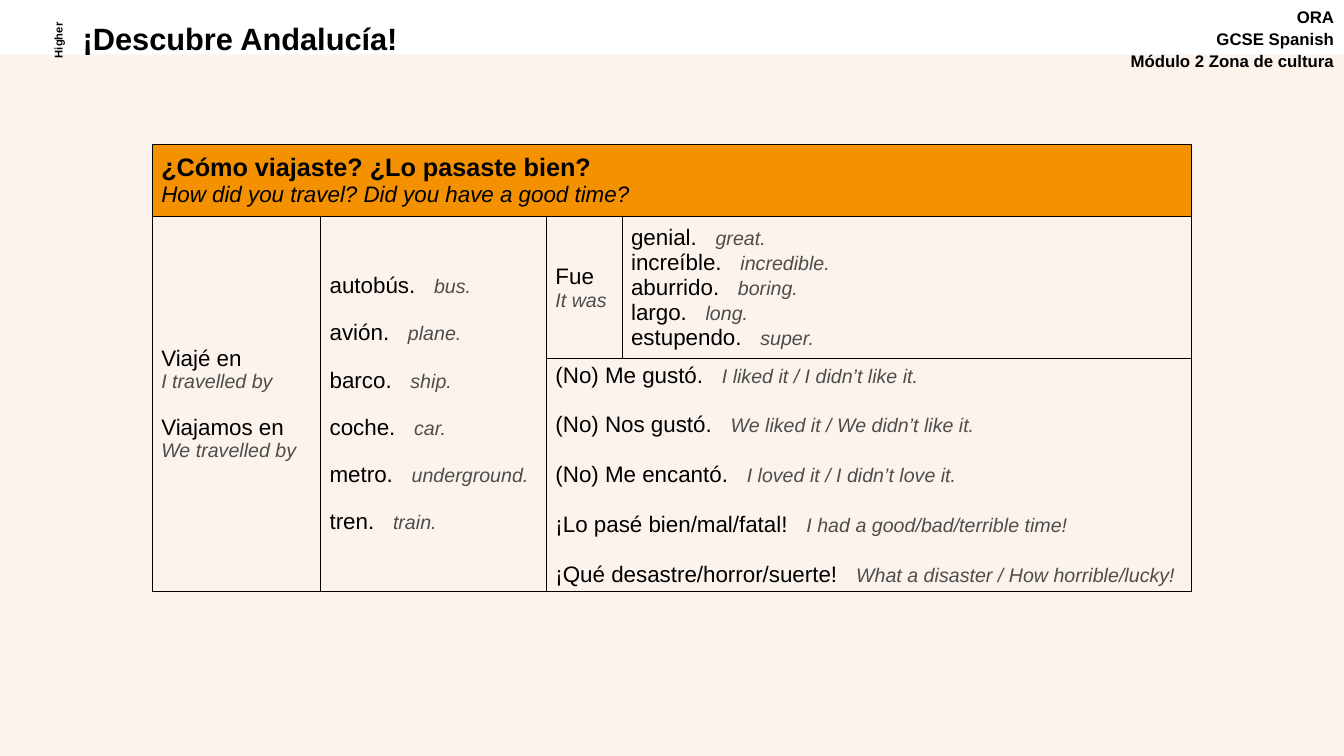
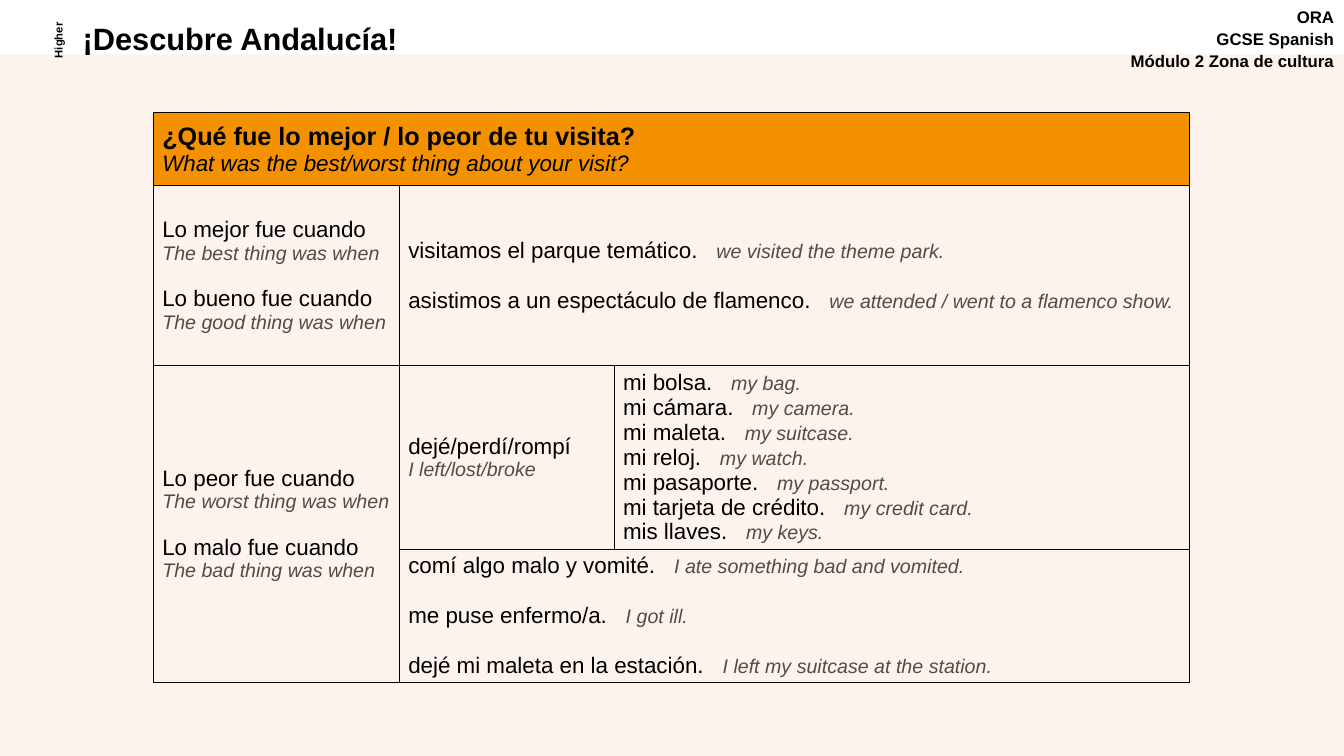
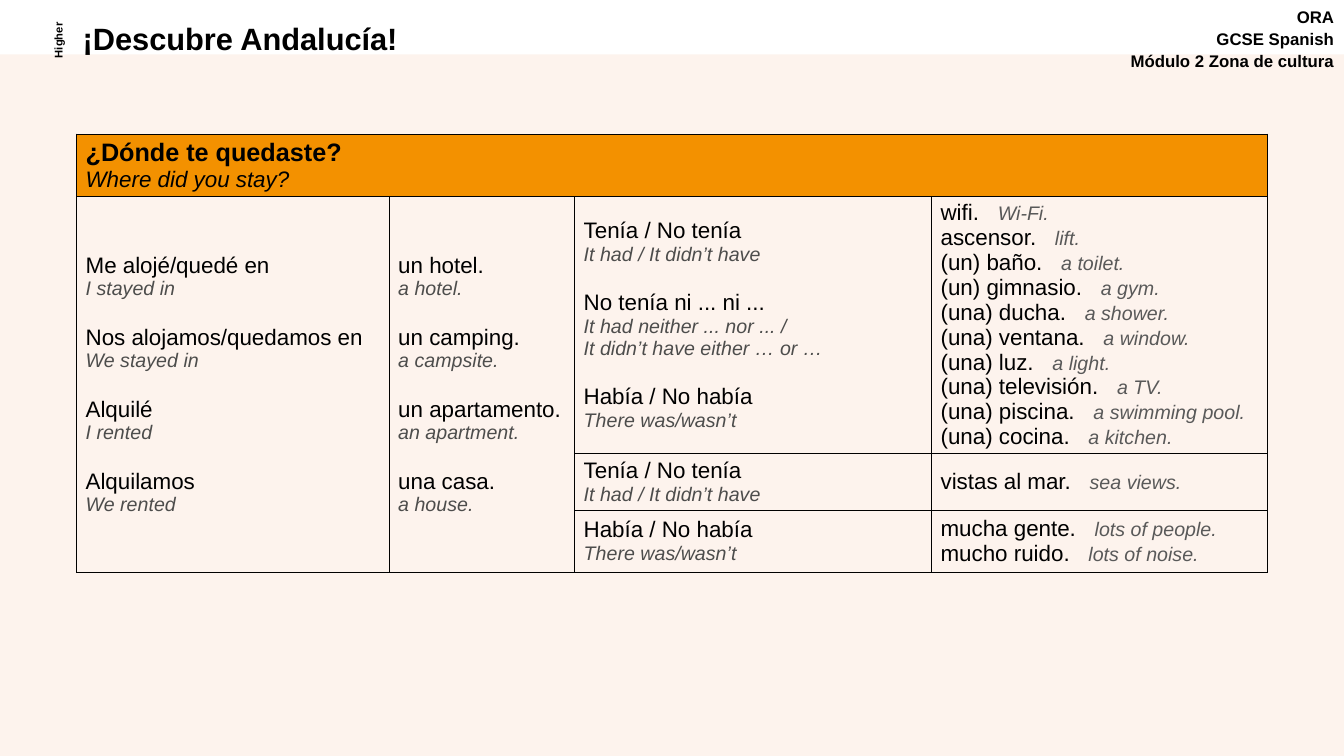
"""Build three Spanish vocabulary slides about a visit to Andalusia."""
from lxml import etree
from pptx import Presentation
from pptx.dml.color import RGBColor
from pptx.enum.shapes import MSO_SHAPE
from pptx.enum.text import MSO_ANCHOR, MSO_AUTO_SIZE, PP_ALIGN
from pptx.oxml.ns import qn
from pptx.util import Inches, Pt

RECT = MSO_SHAPE.RECTANGLE
TOP, MIDDLE = MSO_ANCHOR.TOP, MSO_ANCHOR.MIDDLE
LEFT, CENTER, RIGHT = PP_ALIGN.LEFT, PP_ALIGN.CENTER, PP_ALIGN.RIGHT
NO_FIT = MSO_AUTO_SIZE.NONE

BLACK = RGBColor(0x00, 0x00, 0x00)
CREAM = RGBColor(0xFD, 0xF3, 0xED)
ORANGE = RGBColor(0xF3, 0x91, 0x00)
DARK = RGBColor(0x4D, 0x4D, 0x4C)
GREY = RGBColor(0x59, 0x59, 0x59)
FONT = "Arial"
SMALL_GAP, MID_GAP, WIDE_GAP = 15.6, 16, 17.9


def write(p, text, size=16, color=BLACK, bold=False, italic=False, spacing=0):
    """Add a formatted run to a paragraph."""
    r = p.add_run()
    r.text = text
    r.font.name, r.font.size = FONT, Pt(size)
    r.font.bold, r.font.italic = bold, italic
    r.font.color.rgb = color
    if spacing:
        r.font._element.set("spc", str(spacing))


def add_borders(cell):
    """Draw a thin black line on each side of a table cell."""
    tcPr = cell._tc.get_or_add_tcPr()
    for side in ("a:lnL", "a:lnR", "a:lnT", "a:lnB"):
        ln = etree.SubElement(tcPr, qn(side), w=str(Pt(0.75)))
        fill = etree.SubElement(ln, qn("a:solidFill"))
        etree.SubElement(fill, qn("a:srgbClr"), val=str(BLACK))


# Cells: row, column, row span, column span, gap, translation colour, groups of "Spanish|English" lines
SLIDES = [
    {
        "at": (1.51, 1.43),
        "cols": [1.67, 2.24, 0.75, 5.65],
        "rows": [0.72, 1.41, 2.3],
        "head": ("¿Cómo viajaste? ¿Lo pasaste bien?",
                 "How did you travel? Did you have a good time?"),
        "cells": [
            (1, 0, 2, 1, SMALL_GAP, DARK, [
                "Viajé en\n|I travelled by",
                "Viajamos en\n|We travelled by"]),
            (1, 1, 2, 1, MID_GAP, DARK, [
                "autobús.|bus.", "avión.|plane.", "barco.|ship.",
                "coche.|car.", "metro.|underground.", "tren.|train."]),
            (1, 2, 1, 1, 0, DARK, ["Fue\n|It was"]),
            (1, 3, 1, 1, 0, DARK, [
                "genial.|great.", "increíble.|incredible.",
                "aburrido.|boring.", "largo.|long.", "estupendo.|super."]),
            (2, 2, 1, 2, WIDE_GAP, DARK, [
                "(No) Me gustó.|I liked it / I didn’t like it.",
                "(No) Nos gustó.|We liked it / We didn’t like it.",
                "(No) Me encantó.|I loved it / I didn’t love it.",
                "¡Lo pasé bien/mal/fatal!|I had a good/bad/terrible time!",
                "¡Qué desastre/horror/suerte!|What a disaster / How horrible/lucky!"]),
        ],
    },
    {
        "at": (1.52, 1.12),
        "cols": [2.44, 2.13, 5.71],
        "rows": [0.72, 1.79, 1.82, 1.32],
        "head": ("¿Qué fue lo mejor / lo peor de tu visita?",
                 "What was the best/worst thing about your visit?"),
        "cells": [
            (1, 0, 1, 1, SMALL_GAP, DARK, [
                "Lo mejor fue cuando\n|The best thing was when",
                "Lo bueno fue cuando\n|The good thing was when"]),
            (1, 1, 1, 2, WIDE_GAP, DARK, [
                "visitamos el parque temático.|we visited the theme park.",
                "asistimos a un espectáculo de flamenco.|we attended / went to a flamenco show."]),
            (2, 0, 2, 1, SMALL_GAP, DARK, [
                "Lo peor fue cuando\n|The worst thing was when",
                "Lo malo fue cuando\n|The bad thing was when"]),
            (2, 1, 1, 1, 0, DARK, ["dejé/perdí/rompí\n|I left/lost/broke"]),
            (2, 2, 1, 1, 0, DARK, [
                "mi bolsa.|my bag.", "mi cámara.|my camera.",
                "mi maleta.|my suitcase.", "mi reloj.|my watch.",
                "mi pasaporte.|my passport.",
                "mi tarjeta de crédito.|my credit card.",
                "mis llaves.|my keys."]),
            (3, 1, 1, 2, WIDE_GAP, DARK, [
                "comí algo malo y vomité.|I ate something bad and vomited.",
                "me puse enfermo/a.|I got ill.",
                "dejé mi maleta en la estación.|I left my suitcase at the station."]),
        ],
    },
    {
        "at": (0.76, 1.33),
        "cols": [3.1, 1.84, 3.54, 3.33],
        "rows": [0.62, 2.55, 0.56, 0.62],
        "head": ("¿Dónde te quedaste?", "Where did you stay?"),
        "cells": [
            (1, 0, 3, 1, WIDE_GAP, DARK, [
                "Me alojé/quedé en\n|I stayed in",
                "Nos alojamos/quedamos en\n|We stayed in",
                "Alquilé\n|I rented",
                "Alquilamos\n|We rented"]),
            (1, 1, 3, 1, WIDE_GAP, DARK, [
                "un hotel.\n|a hotel.", "un camping.\n|a campsite.",
                "un apartamento.\n|an apartment.", "una casa.\n|a house."]),
            (1, 2, 1, 1, WIDE_GAP, DARK, [
                "Tenía / No tenía\n|It had / It didn’t have",
                "No tenía ni ... ni ...\n|It had neither ... nor ... /\n|It didn’t have either … or …",
                "Había / No había\n|There was/wasn’t"]),
            (1, 3, 1, 1, 0, GREY, [
                "wifi.|Wi-Fi.", "ascensor.|lift.", "(un) baño.|a toilet.",
                "(un) gimnasio.|a gym.", "(una) ducha.|a shower.",
                "(una) ventana.|a window.", "(una) luz.|a light.",
                "(una) televisión.|a TV.", "(una) piscina.|a swimming pool.",
                "(una) cocina.|a kitchen."]),
            (2, 2, 1, 1, 0, DARK, ["Tenía / No tenía\n|It had / It didn’t have"]),
            (2, 3, 1, 1, 0, GREY, ["vistas al mar.|sea views."]),
            (3, 2, 1, 1, 0, DARK, ["Había / No había\n|There was/wasn’t"]),
            (3, 3, 1, 1, 0, GREY, [
                "mucha gente.|lots of people.", "mucho ruido.|lots of noise."]),
        ],
    },
]

prs = Presentation()
prs.slide_width, prs.slide_height = Inches(13.33), Inches(7.5)
layout = prs.slide_layouts[5]
title = layout.placeholders[0]
title.left, title.top = Inches(0.72), Inches(0.19)
title.width, title.height = Inches(6.88), Inches(0.43)

slides = [prs.slides.add_slide(layout) for _ in SLIDES]

shapes = slides[0].shapes
band = shapes.add_shape(RECT, Inches(0), Inches(0.54), Inches(13.33), Inches(6.96))
band.shadow.inherit = False
band.fill.solid()
band.fill.fore_color.rgb = CREAM
band.line.fill.background()

course = shapes.add_textbox(Inches(10.95), Inches(0.02), Inches(2.38), Inches(0.77))
tf = course.text_frame
tf.word_wrap = True
for i, text in enumerate(["ORA", "GCSE Spanish", "Módulo 2 Zona de cultura"]):
    p = tf.add_paragraph() if i else tf.paragraphs[0]
    p.alignment = RIGHT
    if i:
        p.space_before = Pt(1.2)
    write(p, text, size=12, bold=True)

tier = shapes.add_textbox(Inches(0.18), Inches(0.29), Inches(0.78), Inches(0.22))
tier.rotation = 270
tier.text_frame.word_wrap = True
p = tier.text_frame.paragraphs[0]
p.alignment = CENTER
write(p, "Higher", size=8, bold=True)

for sp in (band, course, tier):
    layout.shapes._spTree.append(sp._element)

for s, data in zip(slides, SLIDES):
    tf = s.shapes.title.text_frame
    tf.auto_size, tf.vertical_anchor = NO_FIT, TOP
    p = tf.paragraphs[0]
    p.alignment, p.line_spacing = LEFT, 0.9
    write(p, "¡Descubre Andalucía!", size=22, bold=True)

    cols, rows = data["cols"], data["rows"]
    left, top = data["at"]
    table = s.shapes.add_table(len(rows), len(cols), Inches(left), Inches(top),
                               Inches(sum(cols)), Inches(sum(rows))).table
    table.first_row = table.horz_banding = False
    for col, width in zip(table.columns, cols):
        col.width = Inches(width)
    for row, height in zip(table.rows, rows):
        row.height = Inches(height)
    for cell in table.iter_cells():
        add_borders(cell)
        cell.fill.background()
        cell.vertical_anchor = MIDDLE
        cell.margin_left = cell.margin_right = Inches(0.09)
        cell.margin_top = cell.margin_bottom = Inches(0.04)

    head = table.cell(0, 0)
    head.merge(table.cell(0, len(cols) - 1))
    head.fill.solid()
    head.fill.fore_color.rgb = ORANGE
    question, translation = data["head"]
    write(head.text_frame.paragraphs[0], question, size=18, bold=True)
    write(head.text_frame.add_paragraph(), translation, italic=True)

    for row, col, height, width, gap, color, groups in data["cells"]:
        cell = table.cell(row, col)
        if height > 1 or width > 1:
            cell.merge(table.cell(row + height - 1, col + width - 1))
        tf = cell.text_frame
        for i, group in enumerate(groups):
            for j, line in enumerate(group.split("\n")):
                p = tf.add_paragraph() if i or j else tf.paragraphs[0]
                if i and not j:
                    p.space_before = Pt(gap)
                spanish, _, english = line.partition("|")
                if spanish:
                    write(p, spanish)
                if spanish and english:
                    write(p, " ", spacing=890)
                if english:
                    write(p, english, size=14, color=color, italic=True)

prs.save("out.pptx")
